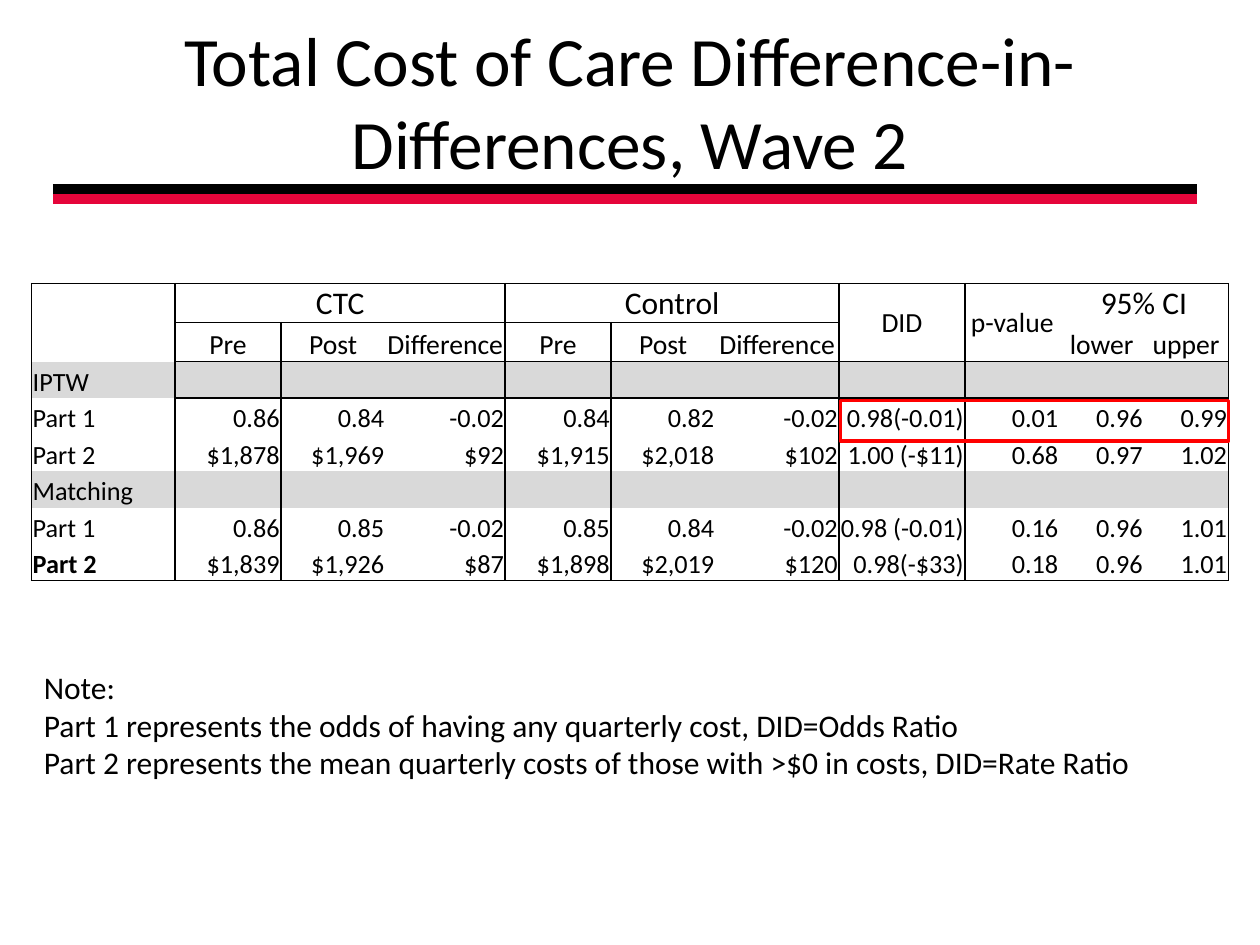
from dataclasses import dataclass

from lxml import etree
from pptx import Presentation
from pptx.dml.color import RGBColor
from pptx.enum.shapes import MSO_CONNECTOR, MSO_SHAPE
from pptx.enum.text import MSO_ANCHOR, PP_ALIGN
from pptx.oxml.ns import qn
from pptx.util import Inches, Pt

LEFT, MID, RIGHT = PP_ALIGN.LEFT, PP_ALIGN.CENTER, PP_ALIGN.RIGHT
CENTER, LOW = MSO_ANCHOR.MIDDLE, MSO_ANCHOR.BOTTOM
LINE, RECT = MSO_CONNECTOR.STRAIGHT, MSO_SHAPE.RECTANGLE


@dataclass(frozen=True)
class Theme:
    font: str = "Calibri"
    ink: str = "000000"
    paper: str = "FFFFFF"
    band: str = "D9D9D9"
    rule: str = "E5053A"
    mark: str = "FF0000"
    title: float = 39.6
    large: float = 18
    head: float = 15.8
    body: float = 15


THEME = Theme()

COLS = [1.14, 0.84, 0.83, 0.95, 0.84, 0.83, 0.98, 1, 0.75, 0.67, 0.67]
ROW = 0.29
TRIO = ["Pre", "Post", "Difference"]
ROWS = [
    ["", "CTC", "", "", "Control", "", "", "DID", "p-value", "95% CI", ""],
    ["", *TRIO, *TRIO, "", "", "lower", "upper"],
    ["IPTW"] + [""] * 10,
    ["Part 1", "0.86", "0.84", "-0.02", "0.84", "0.82", "-0.02",
     "0.98(-0.01)", "0.01", "0.96", "0.99"],
    ["Part 2", "$1,878", "$1,969", "$92", "$1,915", "$2,018", "$102",
     "1.00 (-$11)", "0.68", "0.97", "1.02"],
    ["Matching"] + [""] * 10,
    ["Part 1", "0.86", "0.85", "-0.02", "0.85", "0.84", "-0.02",
     "0.98 (-0.01)", "0.16", "0.96", "1.01"],
    ["Part 2", "$1,839", "$1,926", "$87", "$1,898", "$2,019", "$120",
     "0.98(-$33)", "0.18", "0.96", "1.01"],
]
BANDS = (2, 5)
# Merged header cells: first and last (row, column)
SPANS = [((0, 1), (0, 3)), ((0, 4), (0, 6)), ((0, 9), (0, 10)),
         ((0, 7), (1, 7)), ((0, 8), (1, 8))]
# Upright rules: column edge -> first row; level rules: row edge -> columns
UPRIGHT = {0: 0, 1: 0, 2: 1, 4: 0, 5: 1, 7: 0, 8: 0, 11: 0}
LEVEL = {0: range(11), 1: range(1, 7), 2: range(1, 11),
         3: range(1, 11), 8: range(11)}


def color(code):
    return RGBColor.from_string(code)


def write(para, text, size, align=LEFT, bold=False):
    para.alignment = align
    run = para.add_run()
    run.text = text
    run.font.name = THEME.font
    run.font.size = Pt(size)
    run.font.bold = bold
    run.font.color.rgb = color(THEME.ink)


def add_box(slide, box):
    frame = slide.shapes.add_textbox(*map(Inches, box)).text_frame
    frame.word_wrap = True
    return frame


def add_title(slide, box):
    frame = add_box(slide, box)
    frame.vertical_anchor = CENTER
    write(frame.paragraphs[0],
          "Total Cost of Care Difference-in- Differences, Wave 2",
          THEME.title, MID)


def add_rules(slide, box):
    left, top, width, gap = box
    for i, code in enumerate((THEME.ink, THEME.rule)):
        y = Inches(top + i * gap)
        line = slide.shapes.add_connector(
            LINE, Inches(left), y, Inches(left + width), y)
        line.line.color.rgb = color(code)
        line.line.width = Pt(6)
        etree.SubElement(line._element.spPr, qn("a:effectLst"))


def set_edge(cell, side, shown):
    edge = etree.SubElement(cell._tc.get_or_add_tcPr(), qn("a:ln" + side))
    edge.set("w", str(Pt(1)))
    if shown:
        fill = etree.SubElement(edge, qn("a:solidFill"))
        etree.SubElement(fill, qn("a:srgbClr")).set("val", THEME.ink)
    else:
        etree.SubElement(edge, qn("a:noFill"))


def add_edges(cell, r, c):
    wide, high = 1, 1
    if cell.is_merge_origin:
        wide, high = cell.span_width, cell.span_height
    for side, col in (("L", c), ("R", c + wide)):
        set_edge(cell, side, col in UPRIGHT and r >= UPRIGHT[col])
    for side, row in (("T", r), ("B", r + high)):
        set_edge(cell, side, c in LEVEL.get(row, ()))


def fill_cell(cell, text, r, c):
    cell.margin_left = cell.margin_right = cell.margin_top = Inches(0.01)
    cell.margin_bottom = 0
    add_edges(cell, r, c)
    cell.fill.solid()
    cell.fill.fore_color.rgb = color(THEME.band if r in BANDS else THEME.paper)
    tall = cell.is_merge_origin and cell.span_height > 1
    cell.vertical_anchor = CENTER if tall else LOW
    if r > 1:
        size, align = THEME.body, RIGHT if c else LEFT
    else:
        large = not text or (r == 0 and not tall)
        size, align = THEME.large if large else THEME.head, MID
    para = cell.text_frame.paragraphs[0]
    if text:
        write(para, text, size, align, bold=(r, c) == (len(ROWS) - 1, 0))
    else:
        end = etree.SubElement(para._p, qn("a:endParaRPr"))
        end.set("sz", str(int(size * 100)))
        etree.SubElement(end, qn("a:latin")).set("typeface", THEME.font)


def add_costs(slide, box):
    table = slide.shapes.add_table(
        len(ROWS), len(COLS), *map(Inches, box)).table
    table.first_row = table.horz_banding = False
    for col, width in zip(table.columns, COLS):
        col.width = Inches(width)
    for first, last in SPANS:
        table.cell(*first).merge(table.cell(*last))
    for r, row in enumerate(ROWS):
        for c, text in enumerate(row):
            fill_cell(table.cell(r, c), text, r, c)


def add_note(slide, box):
    frame = add_box(slide, box)
    lines = [
        "Note:",
        "Part 1 represents the odds of having any quarterly cost, "
        "DID=Odds Ratio",
        "Part 2 represents the mean quarterly costs of those with >$0 "
        "in costs, DID=Rate Ratio",
    ]
    for i, text in enumerate(lines):
        para = frame.add_paragraph() if i else frame.paragraphs[0]
        write(para, text, THEME.large)


def add_mark(slide, box):
    mark = slide.shapes.add_shape(RECT, *map(Inches, box))
    mark.shadow.inherit = False
    mark.fill.background()
    mark.line.color.rgb = color(THEME.mark)
    mark.line.width = Pt(2)


def main():
    deck = Presentation()
    deck.slide_width, deck.slide_height = Inches(10), Inches(7.5)
    slide = deck.slides.add_slide(deck.slide_layouts[6])
    # Heading
    add_rules(slide, (0.42, 1.5, 9.08, 0.08))
    add_title(slide, (0.5, 0.17, 9, 1.25))
    # Cost table, its note and the marked result
    add_costs(slide, (0.25, 2.25, sum(COLS), ROW * len(ROWS)))
    add_note(slide, (0.25, 5.25, 9.33, 1.01))
    add_mark(slide, (6.67, 3.18, 3.08, 0.32))
    deck.save("out.pptx")


if __name__ == "__main__":
    main()
